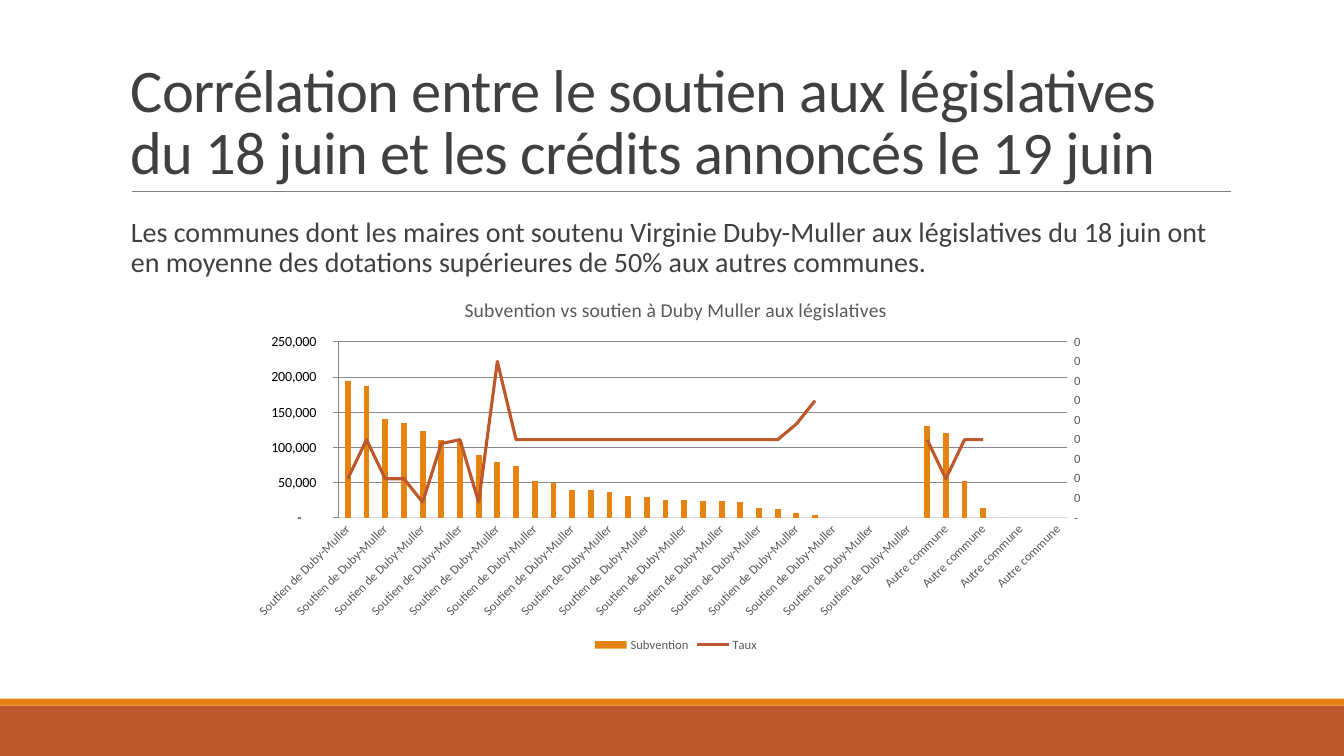
from dataclasses import dataclass, field

from lxml import etree
from pptx import Presentation
from pptx.chart.axis import ValueAxis
from pptx.chart.chart import Chart
from pptx.chart.data import CategoryChartData
from pptx.dml.color import RGBColor
from pptx.enum.chart import XL_CHART_TYPE as CT, XL_LEGEND_POSITION as LP
from pptx.enum.chart import XL_MARKER_STYLE as Marker, XL_TICK_MARK as Tick
from pptx.enum.shapes import MSO_CONNECTOR as Conn, MSO_SHAPE as Shp
from pptx.enum.text import MSO_ANCHOR as Anchor
from pptx.oxml import parse_xml
from pptx.oxml.ns import nsdecls, qn
from pptx.util import Pt

FONT = "Calibri"
ORANGE, RUST, DARK, GREY, PALE = "E48312", "BD582C", "404040", "595959", "D9D9D9"
Box = tuple[float, float, float, float]


@dataclass
class Band:
    box: Box
    color: str


@dataclass
class Text:
    text: str
    box: Box
    size: float
    anchor: Anchor
    right_inset: float
    para: dict = field(default_factory=dict)
    spacing: int = 0


BANDS = [Band((0, 504, 960, 36), RUST), Band((0, 499, 960, 5), ORANGE)]
TEXTS = [
    Text("Corrélation entre le soutien aux législatives du 18 juin et les crédits "
         "annoncés le 19 juin", (86.4, 22.3, 792, 114.5), 43.2, Anchor.BOTTOM, 7.2,
         {"line_spacing": 0.85}, -50),
    Text("Les communes dont les maires ont soutenu Virginie Duby-Muller aux législatives "
         "du 18 juin ont en moyenne des dotations supérieures de 50% aux autres communes.",
         (86.4, 152.6, 792, 316.8), 20, Anchor.TOP, 0,
         {"line_spacing": 0.9, "space_before": Pt(12), "space_after": Pt(2)}),
]

# Chart values: supporting communes first, then the others
CATEGORIES = ["Soutien de Duby-Muller"] * 31 + ["Autre commune"] * 8
GRANTS = [
    195000, 187000, 140000, 135000, 124000, 110000, 108000, 90000, 80000, 74000, 53000,
    50000, 40000, 40000, 36000, 31000, 29000, 26000, 25000, 24000, 24000, 22000, 14000,
    13000, 7000, 4000, *[None] * 5, 130000, 120000, 52000, 14000, 0, *[None] * 3]
RATES = [0.1, 0.2, 0.1, 0.1, 0.04, 0.19, 0.2, 0.04, 0.4, *[0.2] * 15, 0.24, 0.3,
         *[None] * 5, 0.2, 0.1, 0.2, 0.2, *[None] * 4]
GRANT_FORMAT = r'_-* #,##0\ _€_-;\-* #,##0\ _€_-;_-* "-"??\ _€_-;_-@_-'
PLOT_LAYOUT = {"x": 0.113, "y": 0.164, "w": 0.836, "h": 0.468}

LINE_PLOT = f"""<c:lineChart {nsdecls('c')}><c:grouping val="standard"/>
<c:varyColors val="0"/><c:marker val="1"/><c:axId val="5001"/><c:axId val="5002"/>
</c:lineChart>"""
AXIS = """<c:{tag} {ns}><c:axId val="{id}"/><c:scaling><c:orientation val="minMax"/>
</c:scaling><c:delete val="{hidden}"/><c:axPos val="{pos}"/>
<c:numFmt formatCode="0%" sourceLinked="0"/><c:majorTickMark val="none"/>
<c:minorTickMark val="none"/><c:tickLblPos val="nextTo"/><c:crossAx val="{other}"/>
<c:crosses val="{crosses}"/></c:{tag}>"""


def rgb(color: str) -> RGBColor:
    return RGBColor.from_string(color)


def set_all(obj, values: dict) -> None:
    for name, value in values.items():
        setattr(obj, name, value)


def set_font(font, size: float, color: str) -> None:
    set_all(font, {"name": FONT, "size": Pt(size), "bold": False})
    font.color.rgb = rgb(color)


def set_line(line, color: str, width: float) -> None:
    line.color.rgb = rgb(color)
    line.width = Pt(width)


def remove_children(parent, tag: str) -> None:
    for child in parent.findall(qn(tag)):
        parent.remove(child)


def add_band(s, band: Band) -> None:
    sp = s.shapes.add_shape(Shp.RECTANGLE, *map(Pt, band.box))
    sp.shadow.inherit = False
    sp.fill.solid()
    sp.fill.fore_color.rgb = rgb(band.color)
    sp.line.fill.background()


def add_text(s, item: Text) -> None:
    tf = s.shapes.add_textbox(*map(Pt, item.box)).text_frame
    set_all(tf, {"word_wrap": True, "vertical_anchor": item.anchor,
                 "margin_left": Pt(7.2), "margin_right": Pt(item.right_inset)})
    p = tf.paragraphs[0]
    set_all(p, item.para)
    r = p.add_run()
    r.text = item.text
    set_font(r.font, item.size, DARK)
    if item.spacing:
        r.font._element.set("spc", str(item.spacing))


def add_rule(s) -> None:
    cn = s.shapes.add_connector(Conn.STRAIGHT, Pt(94.3), Pt(136.8), Pt(879.1), Pt(136.8))
    set_line(cn.line, "808080", 0.5)
    etree.SubElement(cn._element.spPr, qn("a:effectLst"))


def move_rates_to_line(chart: Chart) -> ValueAxis:
    """Turn the second series into a line on a right-hand axis."""
    plot_area = chart._chartSpace.chart.plotArea
    bars = plot_area.find(qn("c:barChart"))
    rates = bars.findall(qn("c:ser"))[1]
    remove_children(rates, "c:invertIfNegative")
    line_plot = parse_xml(LINE_PLOT)
    line_plot.insert(2, rates)
    bars.addnext(line_plot)
    cat_axis, right_axis = (
        parse_xml(AXIS.format(ns=nsdecls("c"), tag=tag, id=own, other=other,
                              hidden=hidden, pos=pos, crosses=crosses))
        for tag, own, other, hidden, pos, crosses in (
            ("catAx", 5001, 5002, 1, "b", "autoZero"),
            ("valAx", 5002, 5001, 0, "r", "max")))
    plot_area.find(qn("c:valAx")).addnext(cat_axis)
    cat_axis.addnext(right_axis)
    return ValueAxis(right_axis)


def set_plot_layout(chart: Chart) -> None:
    plot_area = chart._chartSpace.chart.plotArea
    remove_children(plot_area, "c:layout")
    parts = [("layoutTarget", "inner"), ("xMode", "edge"), ("yMode", "edge"),
             *PLOT_LAYOUT.items()]
    inner = "".join(f'<c:{tag} val="{value}"/>' for tag, value in parts)
    plot_area.insert(0, parse_xml(f"<c:layout {nsdecls('c')}><c:manualLayout>{inner}"
                                  "</c:manualLayout></c:layout>"))


def add_grant_chart(s) -> None:
    data = CategoryChartData()
    data.categories = CATEGORIES
    data.add_series("Subvention", GRANTS, GRANT_FORMAT)
    data.add_series("Taux", RATES, "0%")
    box = map(Pt, (171.4, 200.2, 622.8, 268.6))
    chart = s.shapes.add_chart(CT.COLUMN_CLUSTERED, *box, data).chart
    set_font(chart.font, 10, "000000")
    right_axis = move_rates_to_line(chart)
    set_plot_layout(chart)

    # Title and legend
    tf = chart.chart_title.text_frame
    tf.text = "Subvention vs soutien à Duby Muller aux législatives"
    set_font(tf.paragraphs[0].runs[0].font, 14, GREY)
    chart.has_legend = True
    set_all(chart.legend, {"position": LP.BOTTOM, "include_in_layout": False})
    set_font(chart.legend.font, 9, GREY)

    # Series
    columns, line = chart.plots
    set_all(columns, {"gap_width": 219, "overlap": -27, "vary_by_categories": False})
    fill = columns.series[0].format.fill
    fill.solid()
    fill.fore_color.rgb = rgb(ORANGE)
    rates = line.series[0]
    rates.smooth = False
    rates.marker.style = Marker.NONE
    set_line(rates.format.line, RUST, 2.25)

    # Axes
    cat_axis, left_axis = chart.category_axis, chart.value_axis
    for axis in (cat_axis, left_axis, right_axis):
        set_all(axis, {"major_tick_mark": Tick.NONE, "minor_tick_mark": Tick.NONE})
        set_font(axis.tick_labels.font, 9, GREY)
        axis.format.line.fill.background()
    set_line(cat_axis.format.line, PALE, 0.75)
    cat_axis._element.find(qn("c:txPr")).find(qn("a:bodyPr")).set("rot", "-2700000")
    set_line(left_axis.major_gridlines.format.line, PALE, 0.75)
    set_all(left_axis, {"minimum_scale": 0, "maximum_scale": 250000, "major_unit": 50000})
    set_all(left_axis.tick_labels, {"number_format": GRANT_FORMAT,
                                    "number_format_is_linked": False})
    set_all(right_axis, {"minimum_scale": 0, "maximum_scale": 0.45, "major_unit": 0.05})


def main() -> None:
    prs = Presentation()
    set_all(prs, {"slide_width": Pt(960), "slide_height": Pt(540)})
    s = prs.slides.add_slide(prs.slide_layouts[6])
    for band in BANDS:
        add_band(s, band)
    add_rule(s)
    for item in TEXTS:
        add_text(s, item)
    add_grant_chart(s)
    prs.save("out.pptx")


if __name__ == "__main__":
    main()
